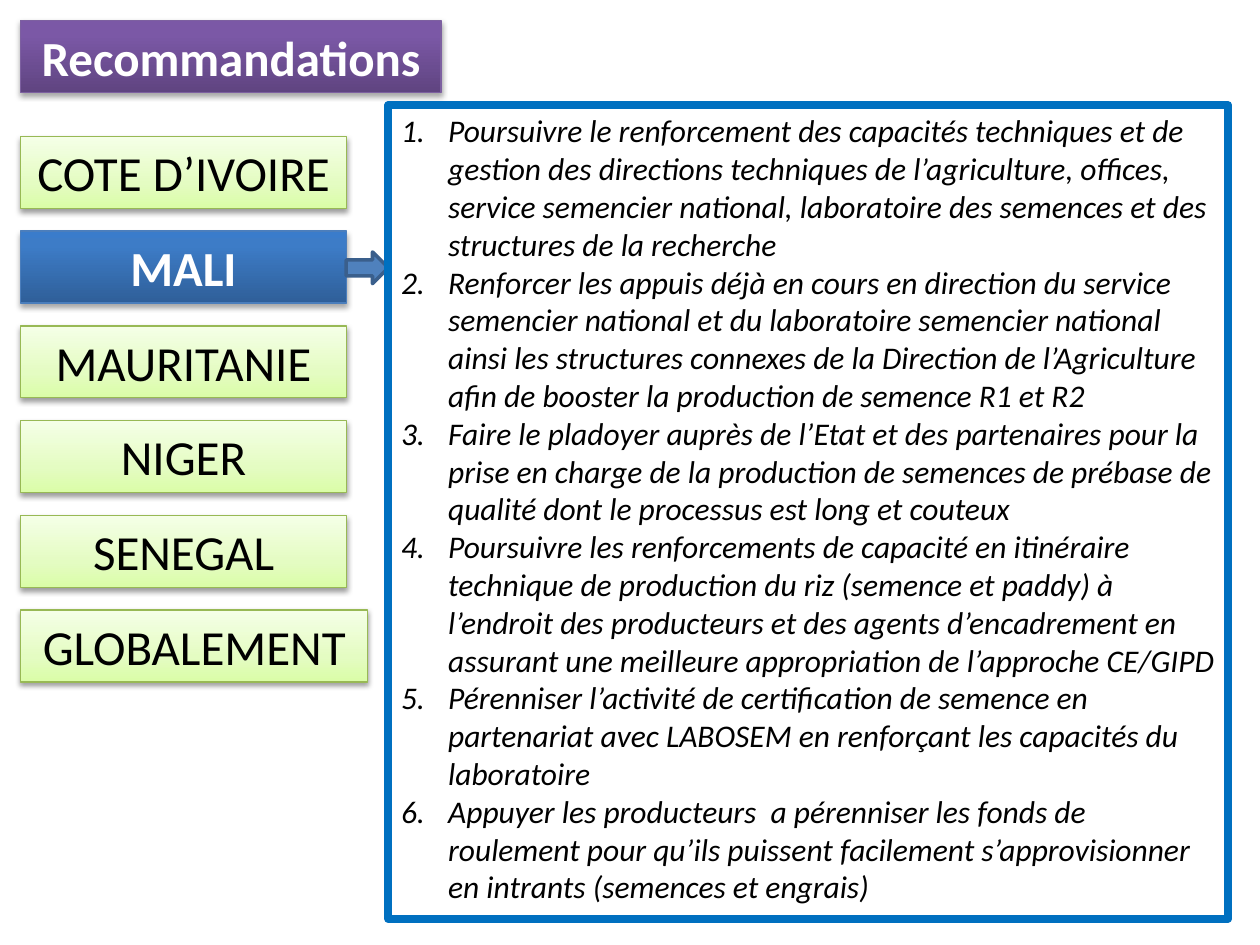
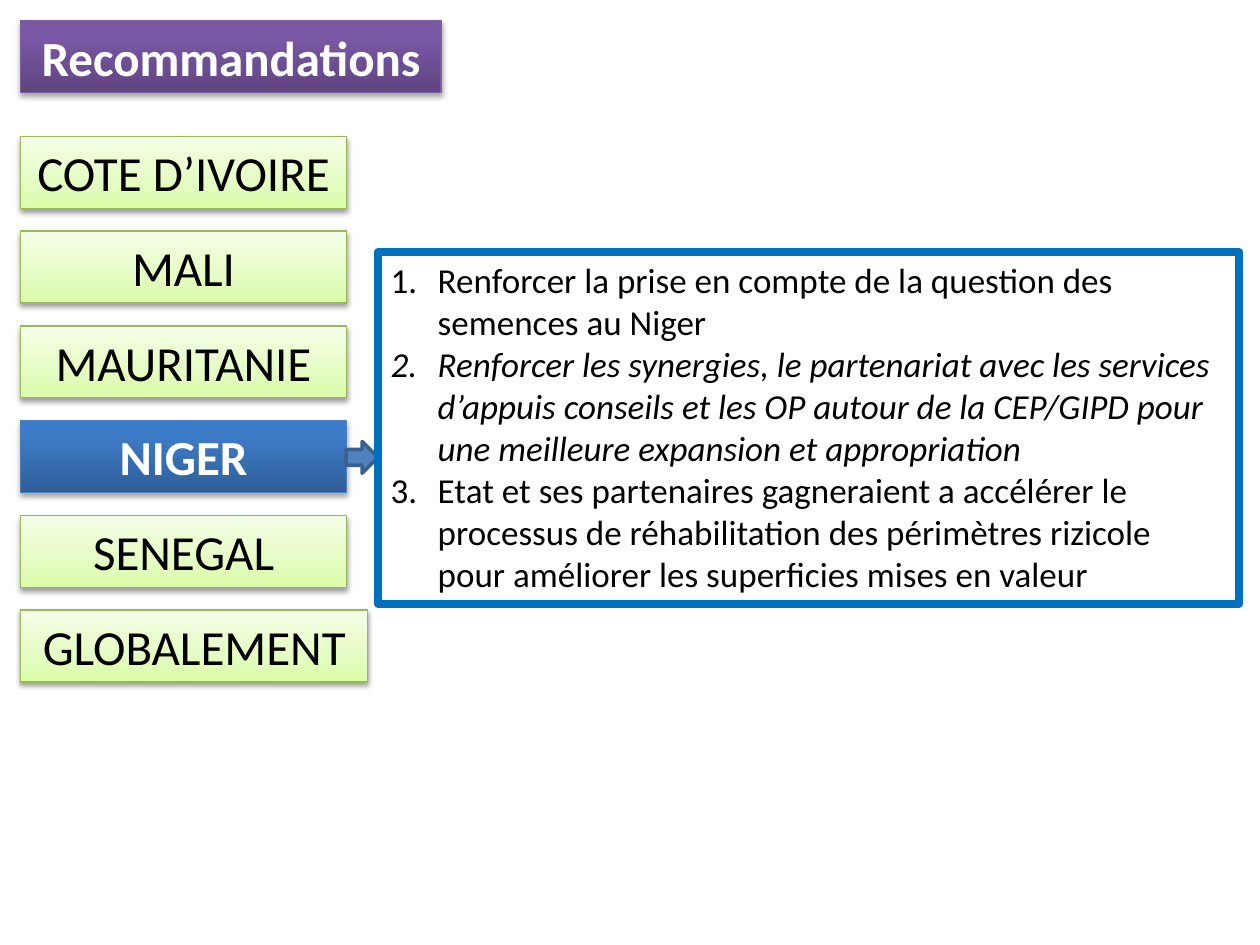
from lxml.etree import SubElement
from pptx import Presentation
from pptx.dml.color import RGBColor
from pptx.enum.shapes import MSO_SHAPE
from pptx.enum.text import MSO_ANCHOR, MSO_AUTO_SIZE, PP_ALIGN
from pptx.oxml.ns import qn
from pptx.util import Cm, Pt

FONT = "Calibri"
MENU = ["COTE D’IVOIRE", "MALI", "MAURITANIE", "NIGER", "SENEGAL", "GLOBALEMENT"]
LEFT, MENU_TOP, PITCH, TAB_W, LAST_W, TAB_H = 0.42, 2.75, 1.91, 6.56, 6.99, 1.45
PURPLE = {"stops": [(0, "5F4480"), (80, "7B58A6"), (100, "7C57A8")],
          "line": "7D60A0", "alpha": 35, "dist": 1.8, "text": "FFFFFF", "bold": True}
BLUE = {"stops": [(0, "2F5F99"), (80, "3D7CC7"), (100, "3A7CCB")],
        "line": "4B7EBC", "alpha": 35, "dist": 1.8, "text": "FFFFFF", "bold": True}
GREEN = {"stops": [(0, "DAFDA7"), (35, "E4FCC2"), (100, "F5FFE7")],
         "line": "98B955", "alpha": 38, "dist": 1.6, "text": "000000", "bold": False}

MALI_ITEMS = [
    ("Poursuivre le renforcement des capacités techniques et de gestion des directions "
     "techniques de l’agriculture, offices, service semencier national, laboratoire des "
     "semences et des structures de la recherche", True),
    ("Renforcer les appuis déjà en cours en direction du service semencier national et du "
     "laboratoire semencier national ainsi les structures connexes de la Direction de "
     "l’Agriculture afin de booster la production de semence R1 et R2", True),
    ("Faire le pladoyer auprès de l’Etat et des partenaires pour la prise en charge de la "
     "production de semences de prébase de qualité dont le processus est long et couteux", True),
    ("Poursuivre les renforcements de capacité en itinéraire technique de production du riz "
     "(semence et paddy) à l’endroit des producteurs et des agents d’encadrement en assurant "
     "une meilleure appropriation de l’approche CE/GIPD", True),
    ("Pérenniser l’activité de certification de semence en partenariat avec LABOSEM en "
     "renforçant les capacités du laboratoire", True),
    ("Appuyer les producteurs  a pérenniser les fonds de roulement pour qu’ils puissent "
     "facilement s’approvisionner en intrants (semences et engrais)", True),
]
NIGER_ITEMS = [
    ("Renforcer la prise en compte de la question des semences au Niger", False),
    ("Renforcer les synergies, le partenariat avec les services d’appuis conseils et les OP "
     "autour de la CEP/GIPD pour une meilleure expansion et appropriation", True),
    ("Etat et ses partenaires gagneraient a accélérer le processus de réhabilitation des "
     "périmètres rizicole pour améliorer les superficies mises en valeur", False),
]


def rgb(value):
    """Turn a hex string into a colour."""
    return RGBColor.from_string(value)


def place(sp, x, y, w, h):
    """Put a shape at a box given in centimetres."""
    sp.left, sp.top, sp.width, sp.height = Cm(x), Cm(y), Cm(w), Cm(h)


def set_line(sp, color, width):
    """Give a shape its outline."""
    sp.line.color.rgb = rgb(color)
    sp.line.width = Pt(width)


def add_run(p, text, size, color, bold=False, italic=False):
    """Add one formatted run to a paragraph."""
    r = p.add_run()
    r.text = text
    r.font.name, r.font.size = FONT, Pt(size)
    r.font.bold, r.font.italic = bold, italic
    r.font.color.rgb = rgb(color)


def prepare_text(sp):
    """Set wrapping, top anchor and a fixed size, and return the text frame."""
    tf = sp.text_frame
    tf.word_wrap = True
    tf.vertical_anchor = MSO_ANCHOR.TOP
    tf.auto_size = MSO_AUTO_SIZE.NONE
    return tf


def style_label(sp, text, style):
    """Give a label its gradient, outline, shadow and centred text."""
    sp.fill.gradient()
    sp.fill.gradient_angle = 90
    props = sp.element.spPr
    stops = props.find(qn("a:gradFill")).find(qn("a:gsLst"))
    for stop in list(stops):
        stops.remove(stop)
    for pos, color in style["stops"]:
        stop = SubElement(stops, qn("a:gs"), pos=str(pos * 1000))
        SubElement(stop, qn("a:srgbClr"), val=color)
    set_line(sp, style["line"], 0.75)
    sp.shadow.inherit = False
    shadow = SubElement(props.find(qn("a:effectLst")), qn("a:outerShdw"),
                        blurRad=str(Pt(3.1)), dist=str(Pt(style["dist"])),
                        dir="5400000", rotWithShape="0")
    color = SubElement(shadow, qn("a:srgbClr"), val="000000")
    SubElement(color, qn("a:alpha"), val=str(style["alpha"] * 1000))
    p = prepare_text(sp).paragraphs[0]
    p.alignment = PP_ALIGN.CENTER
    add_run(p, text, 28, style["text"], style["bold"])


def add_menu(s, active, x, y):
    """Stack the menu labels and highlight the active one."""
    for i, name in enumerate(MENU):
        sp = s.shapes.add_shape(MSO_SHAPE.RECTANGLE, 0, 0, 0, 0)
        place(sp, x, y + i * PITCH, LAST_W if name == MENU[-1] else TAB_W, TAB_H)
        style_label(sp, name, BLUE if name == active else GREEN)


def add_pointer(s, x, y, w):
    """Draw the arrow from the active label to the panel."""
    sp = s.shapes.add_shape(MSO_SHAPE.RIGHT_ARROW, 0, 0, 0, 0)
    place(sp, x, y, w, 0.64)
    sp.fill.solid()
    sp.fill.fore_color.rgb = rgb("4F81BD")
    set_line(sp, "3A5F8C", 2)
    sp.shadow.inherit = False


def fill_panel(sp, items, size, box):
    """Turn the body placeholder into the framed numbered list."""
    place(sp, *box)
    sp.fill.background()
    set_line(sp, "0070C0", 4.5)
    tf = prepare_text(sp)
    for i, (text, italic) in enumerate(items):
        p = tf.add_paragraph() if i else tf.paragraphs[0]
        p.space_before = Pt(0)
        props = p._p.get_or_add_pPr()
        props.set("marL", str(Cm(0.95)))
        props.set("indent", str(-Cm(0.95)))
        SubElement(props, qn("a:buFont"), typeface=FONT)
        SubElement(props, qn("a:buAutoNum"), type="arabicPeriod")
        add_run(p, text, size, "000000", italic=italic)
    sp.element.getparent().append(sp.element)


def add_country_slide(prs, country, items, size, box):
    """Build the recommendations slide of one country."""
    s = prs.slides.add_slide(prs.slide_layouts[1])
    title, body = s.placeholders
    place(title, LEFT, 0.42, 8.47, TAB_H)
    style_label(title, "Recommandations", PURPLE)
    add_menu(s, country, LEFT, MENU_TOP)
    menu_right = LEFT + TAB_W
    active_top = MENU_TOP + MENU.index(country) * PITCH
    add_pointer(s, menu_right, active_top + 0.42, box[0] - menu_right)
    fill_panel(body, items, size, box)


def main():
    """Build and save the presentation."""
    prs = Presentation()
    prs.slide_width, prs.slide_height = Cm(25.4), Cm(19.05)
    add_country_slide(prs, "MALI", MALI_ITEMS, 18, (7.83, 2.12, 16.93, 16.4))
    add_country_slide(prs, "NIGER", NIGER_ITEMS, 20, (7.62, 5.08, 17.36, 7.09))
    prs.save("out.pptx")


if __name__ == "__main__":
    main()
